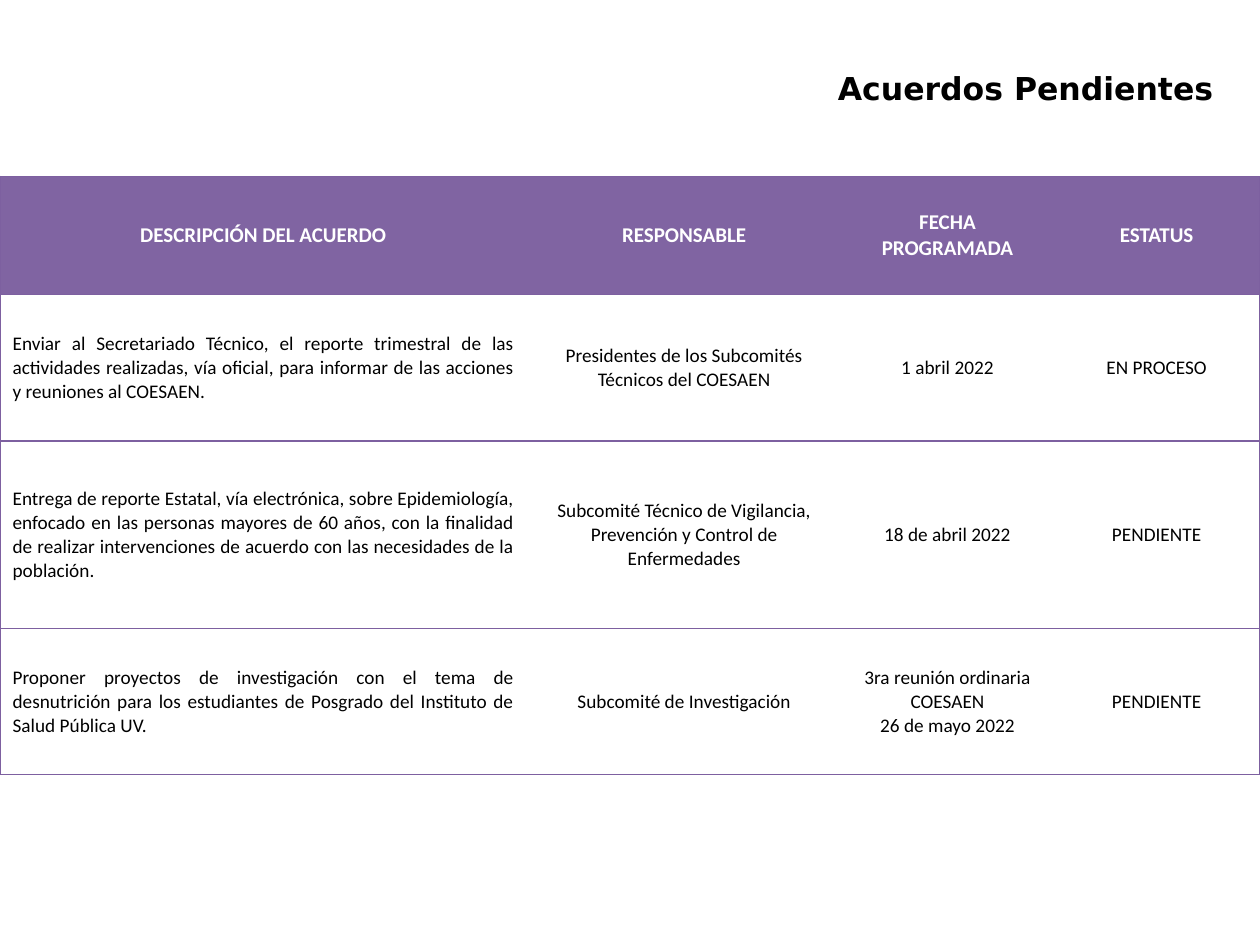
from lxml import etree
from pptx import Presentation
from pptx.dml.color import RGBColor
from pptx.enum.text import MSO_ANCHOR as Anchor, PP_ALIGN as Align
from pptx.oxml.ns import qn
from pptx.util import Inches, Pt

BLACK = RGBColor(0x00, 0x00, 0x00)
WHITE = RGBColor(0xFF, 0xFF, 0xFF)
PURPLE = RGBColor(0x80, 0x64, 0xA2)
BORDER = RGBColor(0x7D, 0x60, 0xA0)

TITLE_FORMAT = {"name": "DejaVu Sans", "size": Pt(18), "bold": True}
HEADER_FORMAT = {"name": "Calibri", "size": Pt(12), "bold": True}
BODY_FORMAT = {"name": "Calibri", "size": Pt(11), "bold": False}

COLUMN_WIDTHS = [4.18, 2.5, 1.68, 1.64]
ROW_HEIGHTS = [0.94, 1.16, 1.49, 1.16]
AGREEMENTS = [
    ["DESCRIPCIÓN DEL ACUERDO", "RESPONSABLE", "FECHA PROGRAMADA", "ESTATUS"],
    ["Enviar al Secretariado Técnico, el reporte trimestral de las actividades "
     "realizadas, vía oficial, para informar de las acciones y reuniones al COESAEN.",
     "Presidentes de los Subcomités Técnicos del COESAEN",
     "1 abril 2022", "EN PROCESO"],
    ["Entrega de reporte Estatal, vía electrónica, sobre Epidemiología, enfocado en "
     "las personas mayores de 60 años, con la finalidad de realizar intervenciones "
     "de acuerdo con las necesidades de la población.",
     "Subcomité Técnico de Vigilancia, Prevención y Control de Enfermedades",
     "18 de abril 2022", "PENDIENTE"],
    ["Proponer proyectos de investigación con el tema de desnutrición para los "
     "estudiantes de Posgrado del Instituto de Salud Pública UV.",
     "Subcomité de Investigación",
     "3ra reunión ordinaria COESAEN\n26 de mayo 2022", "PENDIENTE"],
]


def format_text(text_frame, font_format, color, alignment):
    for paragraph in text_frame.paragraphs:
        paragraph.alignment = alignment
        for name, value in font_format.items():
            setattr(paragraph.font, name, value)
        paragraph.font.color.rgb = color


def set_borders(cell, visible_sides):
    """Draw the visible sides and hide the others; lines precede the fill."""
    properties = cell._tc.get_or_add_tcPr()
    for position, side in enumerate("LRTB"):
        line = etree.Element(qn(f"a:ln{side}"), w=str(Pt(0.75)))
        if side in visible_sides:
            fill = etree.SubElement(line, qn("a:solidFill"))
            etree.SubElement(fill, qn("a:srgbClr"), val=str(BORDER))
        else:
            etree.SubElement(line, qn("a:noFill"))
        properties.insert(position, line)


def add_title(slide, left, top, width, height):
    title = slide.shapes.title
    title.left, title.top, title.width, title.height = left, top, width, height
    title.text_frame.text = "Acuerdos Pendientes"
    title.text_frame.word_wrap = False
    title.text_frame.vertical_anchor = Anchor.MIDDLE
    format_text(title.text_frame, TITLE_FORMAT, BLACK, Align.LEFT)


def add_agreements_table(slide, left, top, width, height):
    table = slide.shapes.add_table(
        len(ROW_HEIGHTS), len(COLUMN_WIDTHS), left, top, width, height).table
    table.horz_banding = False
    for column, column_width in zip(table.columns, COLUMN_WIDTHS):
        column.width = Inches(column_width)
    for row, row_height in zip(table.rows, ROW_HEIGHTS):
        row.height = Inches(row_height)

    last_column = len(COLUMN_WIDTHS) - 1
    for row_index, texts in enumerate(AGREEMENTS):
        for column_index, text in enumerate(texts):
            cell = table.cell(row_index, column_index)
            cell.text = text
            cell.vertical_anchor = Anchor.MIDDLE
            if row_index == 0:
                cell.fill.solid()
                cell.fill.fore_color.rgb = PURPLE
                format_text(cell.text_frame, HEADER_FORMAT, WHITE, Align.CENTER)
            else:
                cell.fill.background()
                alignment = Align.JUSTIFY if column_index == 0 else Align.CENTER
                format_text(cell.text_frame, BODY_FORMAT, BLACK, alignment)
            # Horizontal rules everywhere, vertical ones only on the outside
            outer_side = {0: "L", last_column: "R"}.get(column_index, "")
            set_borders(cell, "TB" + outer_side)


def main():
    presentation = Presentation()
    presentation.slide_width = Inches(10)
    presentation.slide_height = Inches(7.5)
    slide = presentation.slides.add_slide(presentation.slide_layouts[5])
    add_agreements_table(slide, Inches(0), Inches(1.4), Inches(10), Inches(4.75))
    add_title(slide, Inches(6.55), Inches(0.5), Inches(3.19), Inches(0.4))
    presentation.save("out.pptx")


if __name__ == "__main__":
    main()
